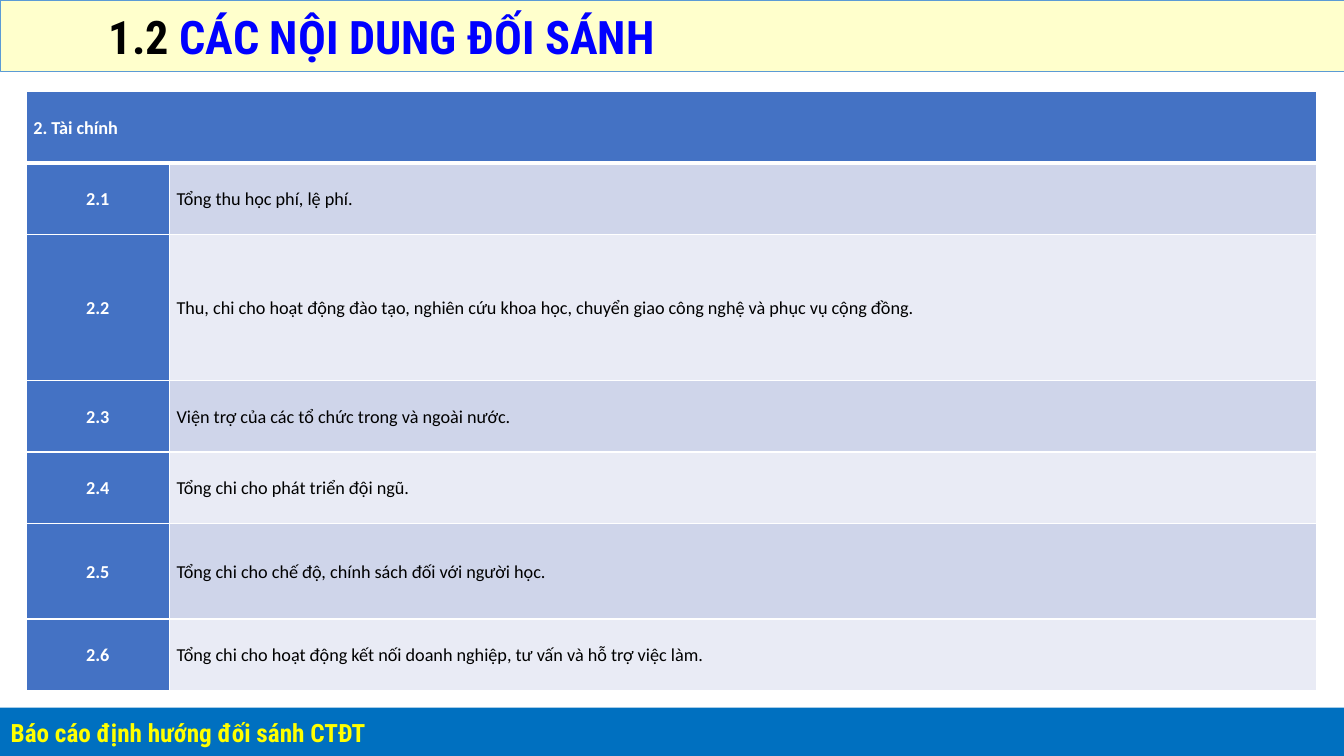
from lxml import etree
from pptx import Presentation
from pptx.dml.color import RGBColor
from pptx.enum.shapes import MSO_SHAPE
from pptx.enum.text import MSO_ANCHOR, MSO_AUTO_SIZE, PP_ALIGN
from pptx.oxml.ns import qn
from pptx.util import Cm, Pt

TITLE_NUMBER = "1.2 "
TITLE_WORDS = "CÁC NỘI DUNG ĐỐI SÁNH"
FOOTER = "Báo cáo định hướng đối sánh CTĐT"
TABLE_HEADING = "2. Tài chính"
ITEMS = [
    ("2.1", "Tổng thu học phí, lệ phí.", 1.8),
    ("2.2", "Thu, chi cho hoạt động đào tạo, nghiên cứu khoa học, chuyển giao công nghệ "
            "và phục vụ cộng đồng.", 3.68),
    ("2.3", "Viện trợ của các tổ chức trong và ngoài nước.", 1.8),
    ("2.4", "Tổng chi cho phát triển đội ngũ.", 1.8),
    ("2.5", "Tổng chi cho chế độ, chính sách đối với người học.", 2.41),
    ("2.6", "Tổng chi cho hoạt động kết nối doanh nghiệp, tư vấn và hỗ trợ việc làm.", 1.8),
]
COLUMN_WIDTHS = (3.61, 28.9)
HEADING_HEIGHT = 1.8

BLACK = RGBColor(0, 0, 0)
WHITE = RGBColor(0xFF, 0xFF, 0xFF)
TITLE_BLUE = RGBColor(0, 0, 0xFF)
CREAM = RGBColor(0xFF, 0xFF, 0xCC)
OUTLINE_BLUE = RGBColor(0x5B, 0x9B, 0xD5)
FOOTER_BLUE = RGBColor(0, 0x70, 0xC0)
YELLOW = RGBColor(0xFF, 0xFF, 0)
TABLE_BLUE = RGBColor(0x44, 0x72, 0xC4)
BANDS = (RGBColor(0xCF, 0xD5, 0xEA), RGBColor(0xE9, 0xEB, 0xF5))

DISPLAY_FONT = "Roboto Condensed"
BODY_FONT = "Calibri"
MIDDLE = MSO_ANCHOR.MIDDLE
LEFT, CENTER, JUSTIFY = PP_ALIGN.LEFT, PP_ALIGN.CENTER, PP_ALIGN.JUSTIFY


def style_span(span, font_name, size, color, bold=True):
    span.font.name = font_name
    span.font.size = Pt(size)
    span.font.bold = bold
    span.font.color.rgb = color


def place(box, left, top, width, height):
    box.left, box.top, box.width, box.height = Cm(left), Cm(top), Cm(width), Cm(height)


def set_borders(cell, bottom_width):
    properties = cell._tc.get_or_add_tcPr()
    widths = {"a:lnL": 1, "a:lnR": 1, "a:lnT": 1, "a:lnB": bottom_width}
    for position, (tag, width) in enumerate(widths.items()):
        line = etree.Element(qn(tag), w=str(Pt(width)))
        fill = etree.SubElement(line, qn("a:solidFill"))
        etree.SubElement(fill, qn("a:srgbClr"), val=str(WHITE))
        properties.insert(position, line)


def fill_cell(cell, text, fill, color, bold, alignment, bottom_width=1):
    cell.fill.solid()
    cell.fill.fore_color.rgb = fill
    cell.vertical_anchor = MIDDLE
    cell.margin_left = cell.margin_right = Cm(0.18)
    cell.margin_top = cell.margin_bottom = 0
    cell.text_frame.text = text
    para = cell.text_frame.paragraphs[0]
    para.alignment = alignment
    para.line_spacing = 1.07
    para.space_after = Pt(8)
    for span in para.runs:
        style_span(span, BODY_FONT, 13, color, bold)
    set_borders(cell, bottom_width)


def add_title(page):
    title = page.shapes.title
    place(title, 0, 0.02, 33.87, 1.78)
    title.fill.solid()
    title.fill.fore_color.rgb = CREAM
    title.line.color.rgb = OUTLINE_BLUE
    title.line.width = Pt(0.5)
    frame = title.text_frame
    frame.auto_size = MSO_AUTO_SIZE.NONE
    frame.vertical_anchor = MIDDLE
    frame.margin_left, frame.margin_right = Cm(2.74), Cm(0.33)
    frame.margin_top = frame.margin_bottom = Cm(0.18)
    para = frame.paragraphs[0]
    para.alignment = LEFT
    for text, color in ((TITLE_NUMBER, BLACK), (TITLE_WORDS, TITLE_BLUE)):
        span = para.add_run()
        span.text = text
        style_span(span, DISPLAY_FONT, 33, color)


def add_footer(page):
    bar = page.shapes.add_shape(MSO_SHAPE.RECTANGLE, 0, Cm(17.83), Cm(33.87), Cm(1.3))
    bar.shadow.inherit = False
    bar.fill.solid()
    bar.fill.fore_color.rgb = FOOTER_BLUE
    bar.line.fill.background()
    box = page.shapes.add_textbox(Cm(0.02), Cm(17.7), Cm(33.85), Cm(1.42))
    frame = box.text_frame
    frame.word_wrap = True
    frame.vertical_anchor = MIDDLE
    frame.text = FOOTER
    para = frame.paragraphs[0]
    para.line_spacing = 1.1
    para.space_before, para.space_after = Pt(12), Pt(6)
    style_span(para.runs[0], DISPLAY_FONT, 18, YELLOW)


def add_finance_table(page):
    heights = [HEADING_HEIGHT] + [height for _, _, height in ITEMS]
    table = page.shapes.add_table(
        len(heights), len(COLUMN_WIDTHS), Cm(0.66), Cm(2.31),
        Cm(sum(COLUMN_WIDTHS)), Cm(sum(heights))).table
    for column, width in zip(table.columns, COLUMN_WIDTHS):
        column.width = Cm(width)
    for row, height in zip(table.rows, heights):
        row.height = Cm(height)
    table.cell(0, 0).merge(table.cell(0, 1))
    for column, text in enumerate((TABLE_HEADING, "")):
        fill_cell(table.cell(0, column), text, TABLE_BLUE, WHITE, True, LEFT, 3)
    for index, (number, text, _) in enumerate(ITEMS):
        row = index + 1
        fill_cell(table.cell(row, 0), number, TABLE_BLUE, WHITE, True, CENTER)
        fill_cell(table.cell(row, 1), text, BANDS[index % 2], BLACK, False, JUSTIFY)


def main():
    deck = Presentation()
    deck.slide_width, deck.slide_height = Cm(33.87), Cm(19.05)
    page = deck.slides.add_slide(deck.slide_layouts[5])
    add_title(page)
    add_footer(page)
    add_finance_table(page)
    deck.save("out.pptx")


if __name__ == "__main__":
    main()
